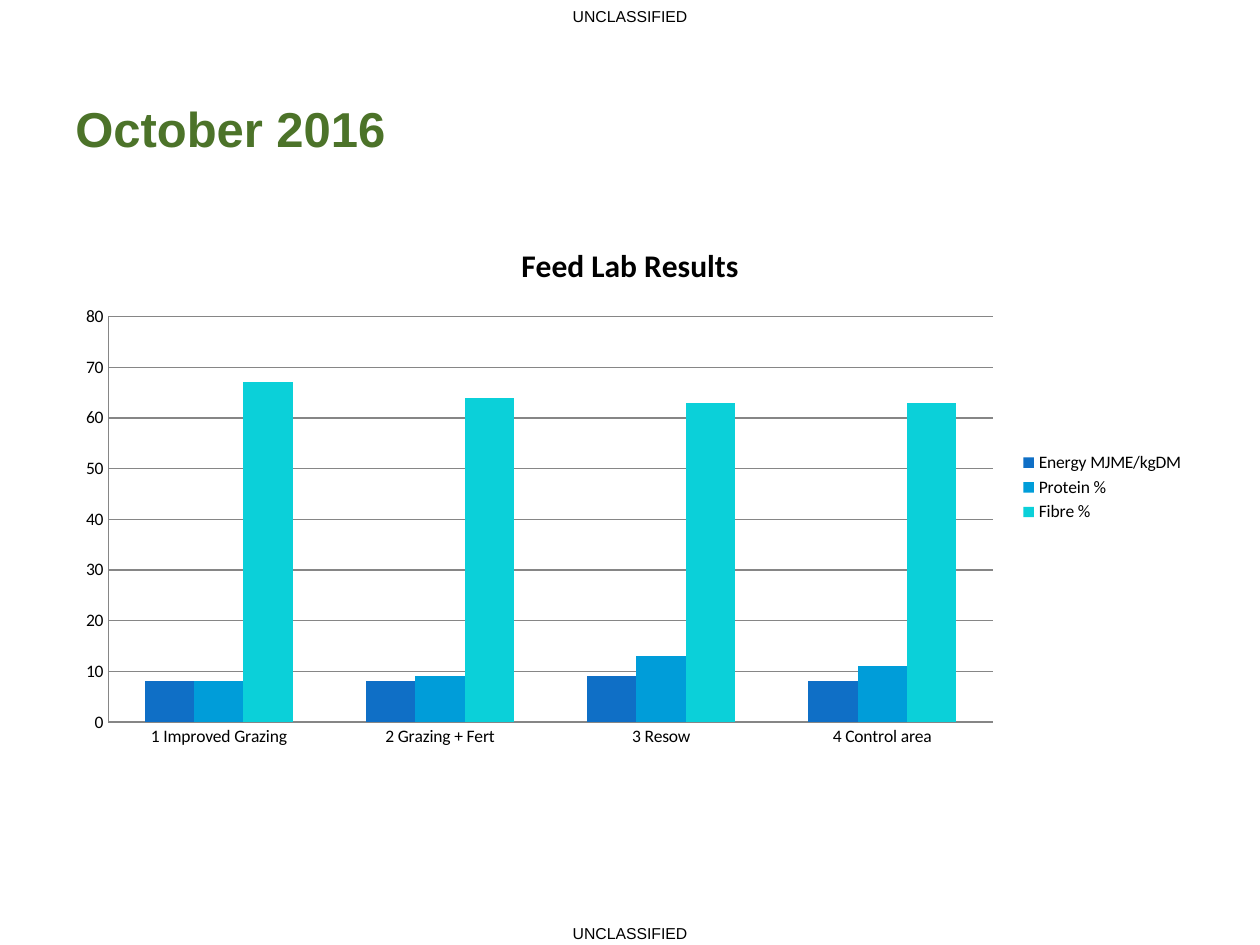
from lxml import etree
from pptx import Presentation
from pptx import util as u
from pptx.chart import data as cd
from pptx.dml.color import RGBColor
from pptx.enum import chart as ch, text
from pptx.oxml import ns

BLACK = RGBColor(0x00, 0x00, 0x00)
GREEN = RGBColor(0x4C, 0x73, 0x29)
GREY = RGBColor(0x86, 0x86, 0x86)
BLUE = RGBColor(0x0F, 0x6F, 0xC6)
SKY = RGBColor(0x00, 0x9D, 0xD9)
TURQUOISE = RGBColor(0x0B, 0xD0, 0xD9)

WIDTH, HEIGHT = 720, 540
MARGIN = 36

CATEGORIES = ["1 Improved Grazing", "2 Grazing + Fert", "3 Resow", "4 Control area"]
SERIES = [
    ("Energy MJME/kgDM", (8, 8, 9, 8), BLUE),
    ("Protein %", (8, 9, 13, 11), SKY),
    ("Fibre %", (67, 64, 63, 63), TURQUOISE),
]


def set_font(font, size, name="Calibri", color=BLACK, bold=False):
    font.size, font.name, font.bold = u.Pt(size), name, bold
    font.color.rgb = color


def write(tf, content, align=None, **fmt):
    p = tf.paragraphs[0]
    p.alignment = align
    r = p.add_run()
    r.text = content
    set_font(r.font, **fmt)


def place_plot(chart, x, y, w, h):
    """Fix the inner plot area as fractions of the chart."""
    plot_area = chart._chartSpace.chart.plotArea
    for old in plot_area.findall(ns.qn("c:layout")):
        plot_area.remove(old)
    layout = etree.Element(ns.qn("c:layout"))
    manual = etree.SubElement(layout, ns.qn("c:manualLayout"))
    settings = [("layoutTarget", "inner"), ("xMode", "edge"), ("yMode", "edge"),
                ("x", x), ("y", y), ("w", w), ("h", h)]
    for tag, value in settings:
        etree.SubElement(manual, ns.qn("c:" + tag)).set("val", str(value))
    plot_area.insert(0, layout)


class Deck:
    def __init__(self, prs):
        self.s = prs.slides.add_slide(prs.slide_layouts[6])

    def label(self, content, x, y, w, h, **fmt):
        sp = self.s.shapes.add_textbox(*map(u.Pt, (x, y, w, h)))
        tf = sp.text_frame
        tf.word_wrap = True
        tf.vertical_anchor = text.MSO_ANCHOR.MIDDLE
        write(tf, content, **fmt)

    def columns(self, title, categories, series, x, y, w, h):
        data = cd.CategoryChartData()
        data.categories = categories
        for name, values, _ in series:
            data.add_series(name, values)
        chart = self.s.shapes.add_chart(
            ch.XL_CHART_TYPE.COLUMN_CLUSTERED, *map(u.Pt, (x, y, w, h)), data).chart
        set_font(chart.font, 10)

        # Title and legend
        chart.has_title = True
        write(chart.chart_title.text_frame, title, size=18, bold=True)
        chart.chart_title.include_in_layout = False
        chart.has_legend = True
        chart.legend.position = ch.XL_LEGEND_POSITION.RIGHT
        chart.legend.include_in_layout = False

        # Columns
        plot = chart.plots[0]
        plot.gap_width, plot.overlap, plot.vary_by_categories = 150, 0, False
        for column, (_, _, color) in zip(plot.series, series):
            column.format.fill.solid()
            column.format.fill.fore_color.rgb = color

        # Axes and gridlines
        values = chart.value_axis
        values.minimum_scale, values.maximum_scale, values.major_unit = 0, 80, 10
        values.has_major_gridlines = True
        for axis in (chart.category_axis, values):
            axis.major_tick_mark = axis.minor_tick_mark = ch.XL_TICK_MARK.NONE
        for part in (chart.category_axis, values, values.major_gridlines):
            part.format.line.color.rgb = GREY
            part.format.line.width = u.Pt(0.75)
        place_plot(chart, 0.04, 0.18, 0.78, 0.76)


def main():
    prs = Presentation()
    prs.slide_width, prs.slide_height = u.Pt(WIDTH), u.Pt(HEIGHT)
    deck = Deck(prs)

    # Classification marks at top and bottom
    for y in (0, 524):
        deck.label("UNCLASSIFIED", 0, y, WIDTH, 18, size=9, name="Arial",
                   align=text.PP_ALIGN.CENTER)

    # Heading
    deck.label("October 2016", MARGIN, 34.5, WIDTH - 2 * MARGIN, 77,
               size=28, name="Arial", color=GREEN, bold=True)

    # Feed results chart
    deck.columns("Feed Lab Results", CATEGORIES, SERIES,
                 MARGIN, 126, WIDTH - 2 * MARGIN, 305)

    prs.save("out.pptx")


if __name__ == "__main__":
    main()
